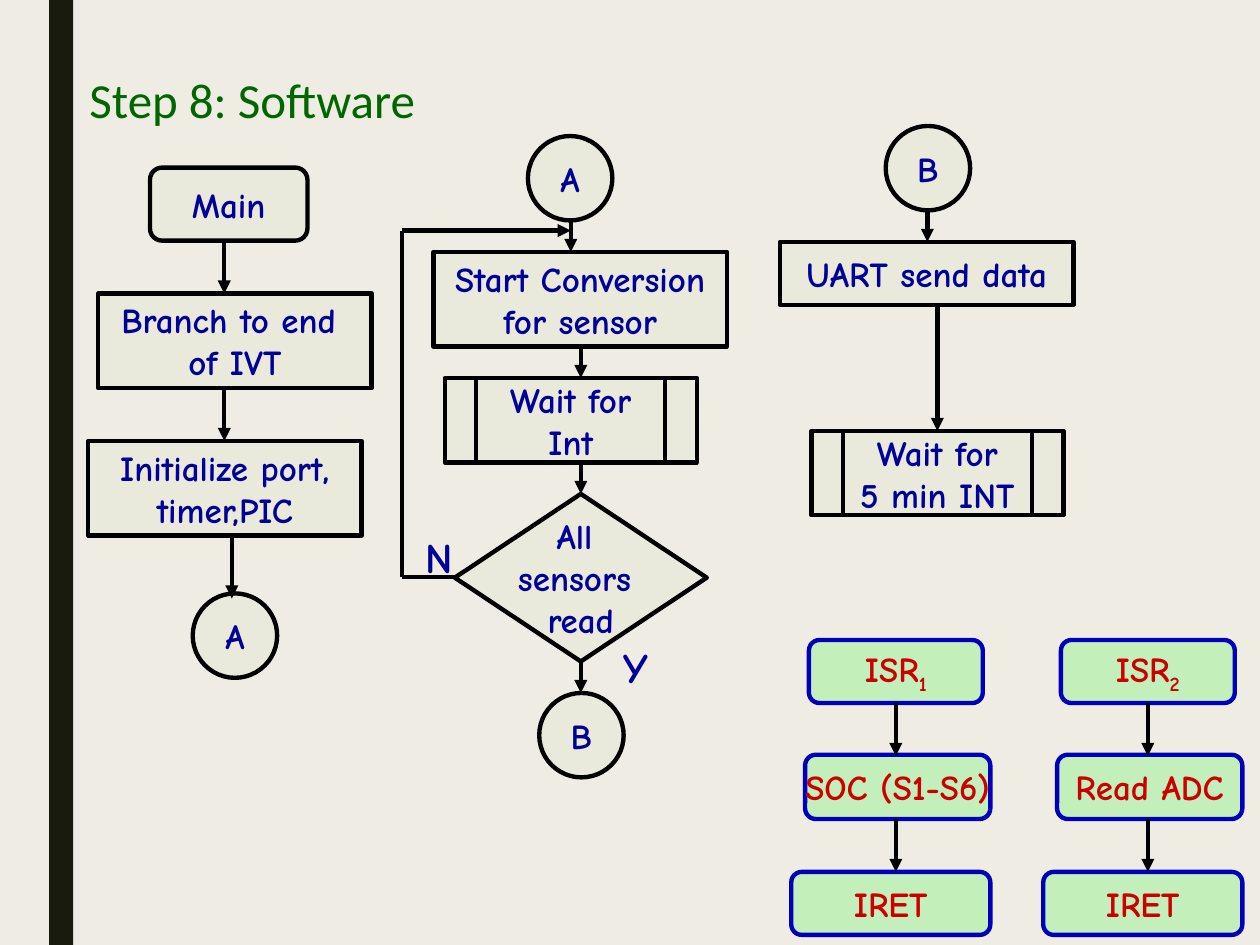
from lxml import etree
from pptx import Presentation
from pptx.dml.color import RGBColor
from pptx.enum import shapes, text
from pptx.oxml.ns import qn
from pptx.util import Inches, Pt

SHAPE = shapes.MSO_SHAPE
INK, NAVY, BLUE, RED = "000000", "000099", "0000BC", "CC0000"
FLOW_FONT = "Comic Neue"
CIRCLE = 0.67


def color(value):
    return RGBColor.from_string(value)


def fill(shape, value, opacity=100):
    """Fill a shape, with its opacity in percent."""
    shape.fill.solid()
    shape.fill.fore_color.rgb = color(value)
    if opacity < 100:
        rgb = shape.fill._xPr.find(qn("a:solidFill"))[0]
        etree.SubElement(rgb, qn("a:alpha"), val=str(opacity * 1000))


def format_run(run, size, value, font=FLOW_FONT, bold=True):
    run.font.size = Pt(size)
    run.font.name = font
    run.font.bold = bold
    run.font.color.rgb = color(value)


def add_node(slide, kind, left, top, width, height, words,
             tint=("8CB64A", 5), border=INK, ink=NAVY, subscript=""):
    shape = slide.shapes.add_shape(
        kind, Inches(left), Inches(top), Inches(width), Inches(height))
    shape.shadow.inherit = False
    fill(shape, *tint)
    shape.line.color.rgb = color(border)
    shape.line.width = Pt(2.5)
    frame = shape.text_frame
    frame.word_wrap = False
    frame.vertical_anchor = text.MSO_ANCHOR.MIDDLE
    frame.text = words
    if subscript:
        run = frame.paragraphs[0].add_run()
        run.text = subscript
        run.font._element.set("baseline", "-25000")
    for paragraph in frame.paragraphs:
        paragraph.alignment = text.PP_ALIGN.CENTER
        for run in paragraph.runs:
            format_run(run, 20, ink)


def add_line(slide, start, end, arrow=True):
    line = slide.shapes.add_connector(
        shapes.MSO_CONNECTOR.STRAIGHT, *map(Inches, start + end))
    line.line.color.rgb = color(INK)
    line.line.width = Pt(2.5)
    if arrow:
        etree.SubElement(line.line._get_or_add_ln(), qn("a:tailEnd"), type="triangle")
    etree.SubElement(line._element.spPr, qn("a:effectLst"))


def add_drop(slide, x, top, bottom):
    """Draw an arrow straight down."""
    add_line(slide, (x, top), (x, bottom))


def add_branch_label(slide, left, top, words):
    box = slide.shapes.add_textbox(
        Inches(left), Inches(top), Inches(0.83), Inches(0.5))
    box.text_frame.word_wrap = True
    box.text_frame.text = words
    format_run(box.text_frame.paragraphs[0].runs[0], 24, NAVY)


def add_frame(slide):
    """Set the background, side bar and title."""
    slide.background.fill.solid()
    slide.background.fill.fore_color.rgb = color("EFEDE3")
    bar = slide.shapes.add_shape(
        SHAPE.RECTANGLE, Inches(0.39), 0, Inches(0.19), Inches(7.5))
    bar.shadow.inherit = False
    fill(bar, "191B0E")
    bar.line.fill.background()

    title = slide.shapes.title
    title.left, title.top = Inches(0.61), Inches(0.5)
    title.width, title.height = Inches(9), Inches(1.25)
    frame = title.text_frame
    frame.text = "Step 8: Software"
    frame.auto_size = text.MSO_AUTO_SIZE.NONE
    frame.vertical_anchor = text.MSO_ANCHOR.TOP
    frame.paragraphs[0].alignment = text.PP_ALIGN.LEFT
    format_run(frame.paragraphs[0].runs[0], 28, "006600", "Calibri", False)


def add_main_flow(slide, left, top):
    add_node(slide, SHAPE.FLOWCHART_ALTERNATE_PROCESS,
             left + 0.49, top, 1.25, 0.58, "Main")
    add_drop(slide, left + 1.08, top + 0.59, top + 1)
    add_node(slide, SHAPE.RECTANGLE, left + 0.08, top + 1, 2.17, 0.75,
             "Branch to end \nof IVT")
    add_drop(slide, left + 1.08, top + 1.75, top + 2.17)
    add_node(slide, SHAPE.RECTANGLE, left, top + 2.17, 2.17, 0.75,
             "Initialize port,\ntimer,PIC")
    add_drop(slide, left + 1.14, top + 2.92, top + 3.42)
    add_node(slide, SHAPE.OVAL, left + 0.83, top + 3.38, CIRCLE, CIRCLE, "A")


def add_sensor_loop(slide, left, top):
    middle = left + 1.42
    entry = left + 1.34
    add_node(slide, SHAPE.OVAL, left + 1, top, CIRCLE, CIRCLE, "A")
    add_drop(slide, entry, top + 0.67, top + 0.92)
    add_node(slide, SHAPE.RECTANGLE, left + 0.25, top + 0.92, 2.33, 0.75,
             "Start Conversion\nfor sensor")
    add_node(slide, SHAPE.FLOWCHART_PREDEFINED_PROCESS,
             left + 0.34, top + 1.92, 2, 0.67, "Wait for\nInt")
    add_node(slide, SHAPE.FLOWCHART_DECISION, left + 0.42, top + 2.84, 2, 1.33,
             "All \nsensors \nread")
    for bottom in (1.92, 2.84, 4.42):
        add_drop(slide, middle, top + bottom - 0.25, top + bottom)
    add_node(slide, SHAPE.OVAL, left + 1.09, top + 4.42, CIRCLE, CIRCLE, "B")

    loop_top, loop_bottom = top + 0.75, top + 3.5
    add_line(slide, (left, loop_bottom), (left + 0.42, loop_bottom), arrow=False)
    add_line(slide, (left, loop_top), (left, loop_bottom), arrow=False)
    add_line(slide, (left, loop_top), (entry, loop_top))
    add_branch_label(slide, left + 0.09, top + 3.09, "N")
    add_branch_label(slide, left + 1.66, top + 3.96, "Y")


def add_send_flow(slide, left, top):
    add_node(slide, SHAPE.OVAL, left + 0.84, top, CIRCLE, CIRCLE, "B")
    add_drop(slide, left + 1.17, top + 0.67, top + 0.92)
    add_node(slide, SHAPE.RECTANGLE, left, top + 0.92, 2.33, 0.5, "UART send data")
    add_drop(slide, left + 1.25, top + 1.42, top + 2.42)
    add_node(slide, SHAPE.FLOWCHART_PREDEFINED_PROCESS,
             left + 0.25, top + 2.42, 2, 0.67, "Wait for\n5 min INT")


def add_interrupt_routine(slide, left, top, number, action):
    steps = [  # left offset, top offset, width, height, words, subscript
        (0.14, 0, 1.38, 0.5, "ISR", number),
        (0.11, 0.91, 1.47, 0.51, action, ""),
        (0, 1.84, 1.58, 0.5, "IRET", ""),
    ]
    for x, y, width, height, words, subscript in steps:
        add_node(slide, SHAPE.FLOWCHART_ALTERNATE_PROCESS, left + x, top + y,
                 width, height, words, ("00FF00", 18), BLUE, RED, subscript)
    for start in (0.5, 1.42):
        add_drop(slide, left + 0.83, top + start, top + start + 0.42)


def main():
    presentation = Presentation()
    presentation.slide_width = Inches(10)
    presentation.slide_height = Inches(7.5)
    slide = presentation.slides.add_slide(presentation.slide_layouts[5])
    add_frame(slide)
    add_main_flow(slide, 0.7, 1.33)
    add_sensor_loop(slide, 3.19, 1.08)
    add_send_flow(slide, 6.19, 1)
    add_interrupt_routine(slide, 6.28, 5.08, "1", "SOC (S1-S6)")
    add_interrupt_routine(slide, 8.28, 5.08, "2", "Read ADC")
    presentation.save("out.pptx")


if __name__ == "__main__":
    main()
